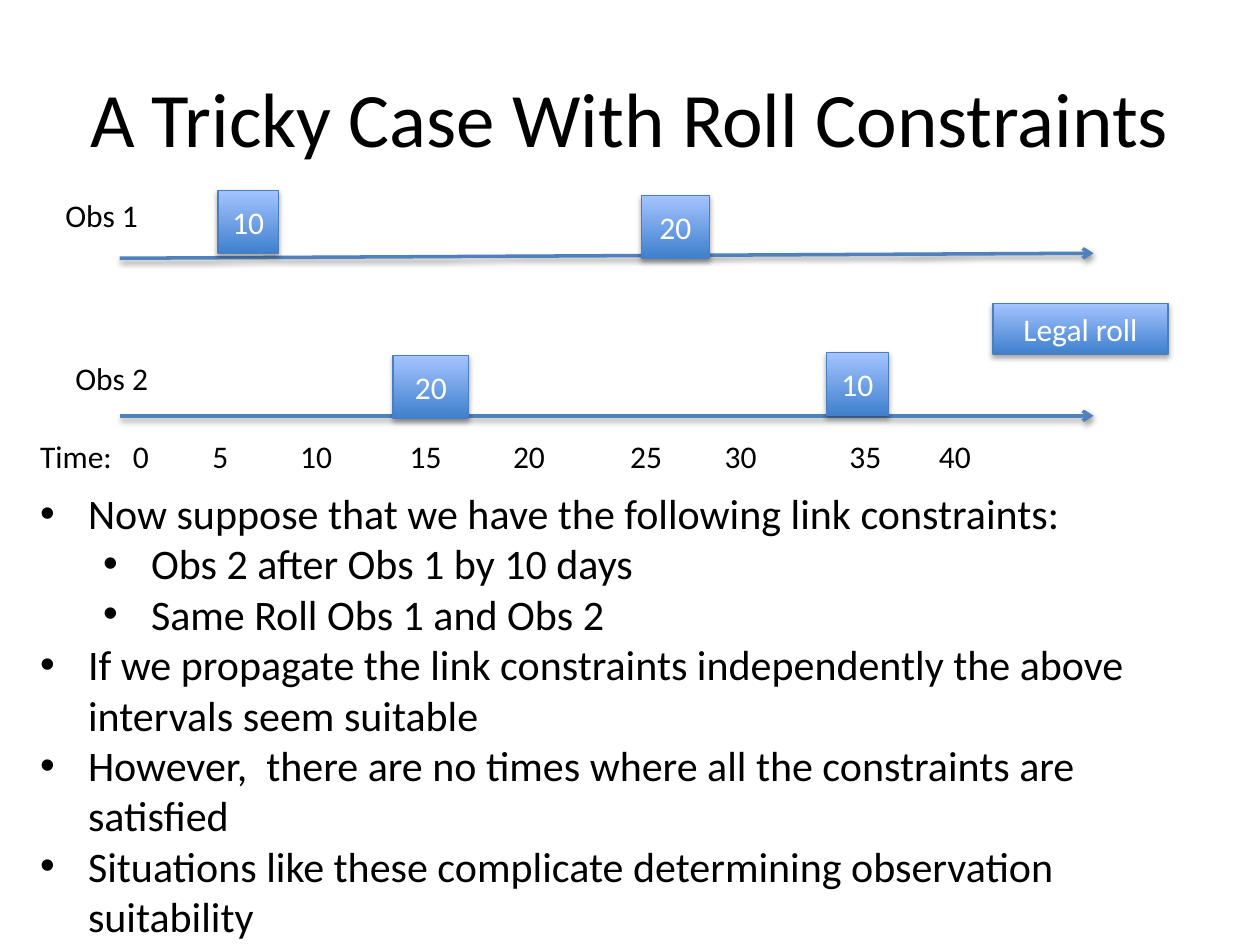
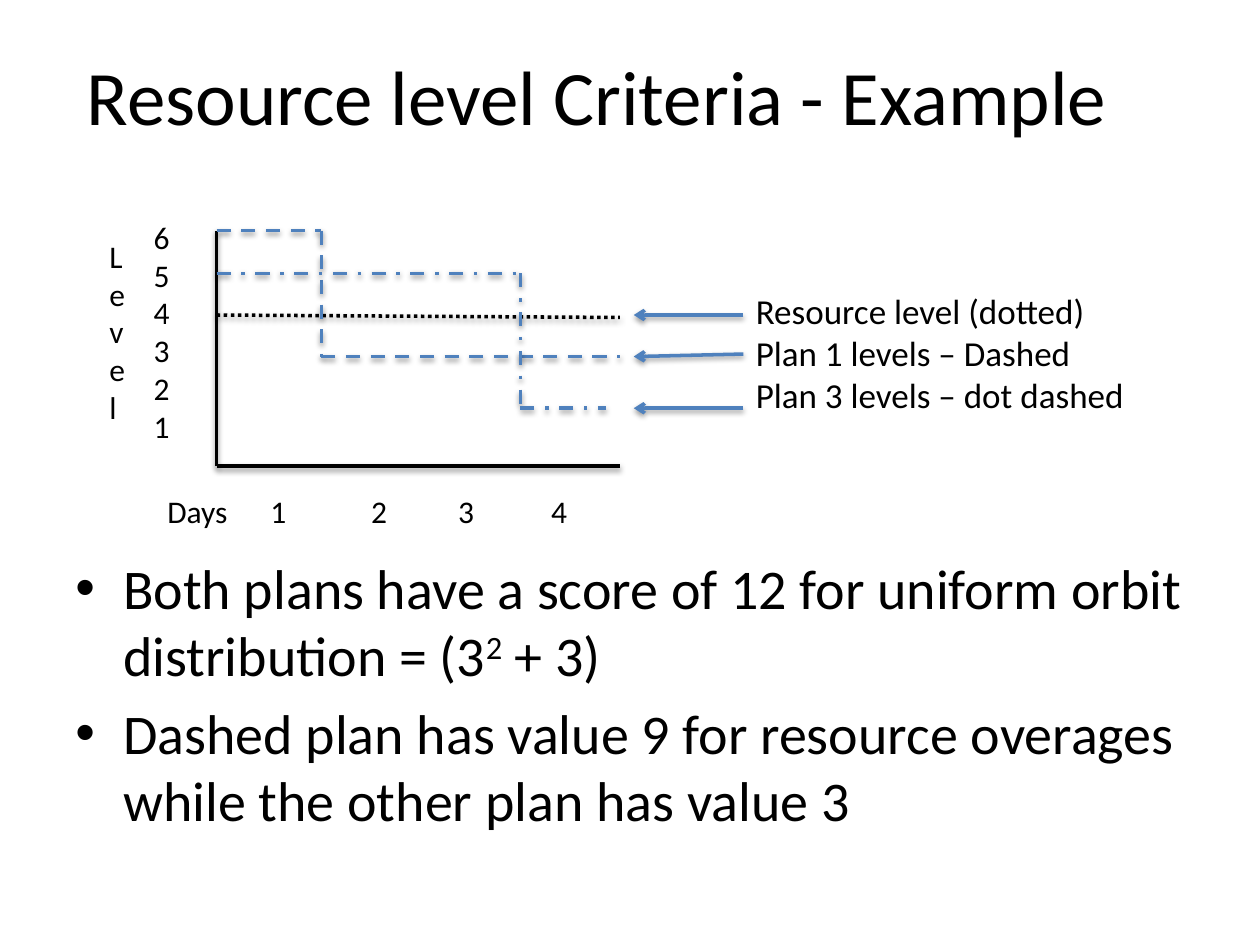
from dataclasses import dataclass
from typing import Optional

import pptx
import pptx.dml.color
import pptx.enum.dml
import pptx.enum.shapes
import pptx.enum.text
import pptx.oxml
import pptx.oxml.ns
import pptx.util
from lxml import etree

Inches = pptx.util.Inches
Pt = pptx.util.Pt
qn = pptx.oxml.ns.qn
Align = pptx.enum.text.PP_ALIGN
Anchor = pptx.enum.text.MSO_ANCHOR
Dash = pptx.enum.dml.MSO_LINE

FONT = "Calibri"
COLOURS = {
    "text": "000000",
    "light": "FFFFFF",
    "accent": "4F81BD",
    "border": "4B7EBC",
    "fill_bottom": "3F80CE",
    "fill_top": "A4C4FF",
}


@dataclass
class Span:
    text: str
    superscript: bool = False


@dataclass
class Para:
    spans: list[Span]
    level: int = 0
    bullet: bool = False
    tabs: tuple[float, ...] = ()


@dataclass
class Block:
    left: float
    top: float
    width: float
    height: float
    paras: list[Para]
    size: float = 18
    space_before: float = 0
    centred: bool = False
    wrap: bool = True


@dataclass
class Interval:
    left: float
    top: float
    width: float
    height: float
    label: str


@dataclass
class Stroke:
    start: tuple[float, float]
    end: tuple[float, float]
    colour: str = "accent"
    dash: Optional[Dash] = None
    arrow: bool = False


def rgb(name: str) -> pptx.dml.color.RGBColor:
    return pptx.dml.color.RGBColor.from_string(COLOURS[name])


def plain(*lines: str) -> list[Para]:
    return [Para([Span(line)]) for line in lines]


def tabbed(labels: list[str], stops: tuple[float, ...]) -> list[Para]:
    return [Para([Span("\t".join(labels))], tabs=stops)]


def add_shadow(properties, alpha: int, distance: float) -> None:
    """Soft shadow straight below the element."""
    for old in properties.findall(qn("a:effectLst")):
        properties.remove(old)
    effects = etree.SubElement(properties, qn("a:effectLst"))
    shadow = etree.SubElement(
        effects, qn("a:outerShdw"), blurRad=str(Pt(3.1)), dist=str(Pt(distance)),
        dir="5400000", rotWithShape="0")
    colour = etree.SubElement(shadow, qn("a:srgbClr"), val=COLOURS["text"])
    etree.SubElement(colour, qn("a:alpha"), val=str(alpha * 1000))


def add_span(paragraph, span: Span, size: float, colour: str = "text") -> None:
    run = paragraph.add_run()
    run.text = span.text
    run.font.name = FONT
    run.font.size = Pt(size)
    run.font.color.rgb = rgb(colour)
    if span.superscript:
        run._r.get_or_add_rPr().set("baseline", "30000")


def format_para(paragraph, para: Para) -> None:
    properties = paragraph._p.get_or_add_pPr()
    if para.bullet:
        paragraph.level = para.level
        properties.set("marL", str(Inches(0.38 + 0.5 * para.level)))
        properties.set("indent", str(Inches(-0.38)))
        etree.SubElement(properties, qn("a:buFont"), typeface="Arial")
        etree.SubElement(properties, qn("a:buChar"), char="•")
    if para.tabs:
        stops = etree.SubElement(properties, qn("a:tabLst"))
        for stop in para.tabs:
            etree.SubElement(stops, qn("a:tab"), pos=str(Inches(stop)), algn="ctr")


def add_block(page, block: Block) -> None:
    box = page.shapes.add_textbox(Inches(block.left), Inches(block.top),
                                  Inches(block.width), Inches(block.height))
    frame = box.text_frame
    frame.word_wrap = block.wrap
    frame.vertical_anchor = Anchor.MIDDLE if block.centred else Anchor.TOP
    for index, para in enumerate(block.paras):
        paragraph = frame.add_paragraph() if index else frame.paragraphs[0]
        paragraph.alignment = Align.CENTER if block.centred else Align.LEFT
        paragraph.space_before = Pt(block.space_before)
        format_para(paragraph, para)
        for span in para.spans:
            add_span(paragraph, span, block.size)


def add_title(page, text: str, left: float, top: float, height: float) -> None:
    add_block(page, Block(left, top, 9, height, plain(text), size=44, centred=True))


def add_interval(page, interval: Interval) -> None:
    box = page.shapes.add_shape(
        pptx.enum.shapes.MSO_SHAPE.RECTANGLE, Inches(interval.left), Inches(interval.top),
        Inches(interval.width), Inches(interval.height))
    box.fill.gradient()
    box.fill.gradient_angle = 90
    for stop, name in zip(box.fill.gradient_stops, ("fill_bottom", "fill_top")):
        stop.color.rgb = rgb(name)
    box.line.color.rgb = rgb("border")
    box.line.width = Pt(0.75)
    box.shadow.inherit = False
    add_shadow(box._element.spPr, 35, 1.8)
    box.text_frame.vertical_anchor = Anchor.MIDDLE
    paragraph = box.text_frame.paragraphs[0]
    paragraph.alignment = Align.CENTER
    add_span(paragraph, Span(interval.label), 18, "light")


def add_stroke(page, stroke: Stroke) -> None:
    ends = [Inches(value) for value in (*stroke.start, *stroke.end)]
    line = page.shapes.add_connector(pptx.enum.shapes.MSO_CONNECTOR.STRAIGHT, *ends)
    line.line.color.rgb = rgb(stroke.colour)
    line.line.width = Pt(2)
    if stroke.dash is not None:
        line.line.dash_style = stroke.dash
    if stroke.arrow:
        etree.SubElement(line.line._get_or_add_ln(), qn("a:tailEnd"), type="arrow")
    add_shadow(line._element.spPr, 38, 1.6)


def add_polyline(page, points: list[tuple[float, float]], colour: str,
                 dash: Optional[Dash] = None) -> None:
    for start, end in zip(points, points[1:]):
        add_stroke(page, Stroke(start, end, colour, dash))


def build_roll_page(page) -> None:
    add_title(page, "A Tricky Case With Roll Constraints", 0.5, 0.3, 1.25)

    # Observation timelines
    for start_y, end_y in ((2.05, 2.01), (3.3, 3.3)):
        add_stroke(page, Stroke((0.95, start_y), (8.68, end_y), arrow=True))
    for name, left, top in (("Obs 1", 0.42, 1.51), ("Obs 2", 0.5, 2.8)):
        add_block(page, Block(left, top, 0.79, 0.4, plain(name), wrap=False))

    # Roll intervals and their key
    for interval in (
        Interval(1.73, 1.51, 0.48, 0.5, "10"),
        Interval(5.09, 1.55, 0.54, 0.5, "20"),
        Interval(3.12, 2.82, 0.6, 0.5, "20"),
        Interval(6.56, 2.8, 0.49, 0.5, "10"),
        Interval(7.88, 2.41, 1.39, 0.4, "Legal roll"),
    ):
        add_interval(page, interval)

    # Time scale
    times = ["Time:"] + [str(day) for day in range(0, 41, 5)]
    stops = (0.8, 1.43, 2.19, 3.06, 3.88, 4.81, 5.56, 6.55, 7.26)
    add_block(page, Block(0.22, 3.42, 7.65, 0.4, tabbed(times, stops)))

    # Discussion
    points = (
        (0, "Now suppose that we have the following link constraints:"),
        (1, "Obs 2 after Obs 1 by 10 days"),
        (1, "Same Roll Obs 1 and Obs 2"),
        (0, "If we propagate the link constraints independently the above intervals seem suitable"),
        (0, "However,  there are no times where all the constraints are satisfied"),
        (0, "Situations like these complicate determining observation suitability"),
    )
    paras = [Para([Span(text)], level, bullet=True) for level, text in points]
    add_block(page, Block(0.22, 3.82, 9.28, 3.74, paras, size=24))


def build_resource_page(page) -> None:
    add_title(page, "Resource level Criteria - Example", 0.24, -0.17, 1.84)

    # Axes and their labels
    left, right, top, bottom = 1.72, 4.92, 1.83, 3.7
    add_polyline(page, [(left, top), (left, bottom), (right, bottom)], "text")
    add_block(page, Block(0.77, 1.83, 0.34, 1.62, plain("Level")))
    add_block(page, Block(1.12, 1.68, 0.48, 2.22, plain(*"654321")))
    days = tabbed(["Days", *"1234"], (0.88, 1.68, 2.37, 3.11))
    add_block(page, Block(1.23, 3.86, 3.79, 0.4, days))

    # Resource level and the two plans
    drop_1, drop_3 = 2.55, 4.13
    add_polyline(page, [(left, 2.5), (right, 2.52)], "text", Dash.ROUND_DOT)
    add_polyline(page, [(left, top), (drop_1, top), (drop_1, 2.83), (right, 2.83)],
                 "accent", Dash.DASH)
    add_polyline(page, [(left, 2.17), (drop_3, 2.17), (drop_3, 3.24), (4.81, 3.24)],
                 "accent", Dash.DASH_DOT)

    # Key
    add_block(page, Block(5.9, 2.25, 3.34, 1.11, plain(
        "Resource level (dotted)", "Plan 1 levels – Dashed", "Plan 3 levels – dot dashed"),
        size=20))
    for start_y, end_y in ((2.5, 2.5), (2.81, 2.83), (3.24, 3.24)):
        add_stroke(page, Stroke((5.9, start_y), (5.03, end_y), arrow=True))

    # Scores
    scores = [
        Para([Span("Both plans have a score of 12 for uniform orbit distribution = (3"),
              Span("2", superscript=True), Span(" + 3)")], bullet=True),
        Para([Span("Dashed plan has value 9 for resource overages "
                   "while the other plan has value 3")], bullet=True),
    ]
    add_block(page, Block(0.5, 4.34, 9, 2.86, scores, size=32, space_before=6.4))


def main() -> None:
    deck = pptx.Presentation()
    deck.slide_width = Inches(10)
    deck.slide_height = Inches(7.5)
    for build in (build_roll_page, build_resource_page):
        build(deck.slides.add_slide(deck.slide_layouts[6]))
    deck.save("out.pptx")


if __name__ == "__main__":
    main()
